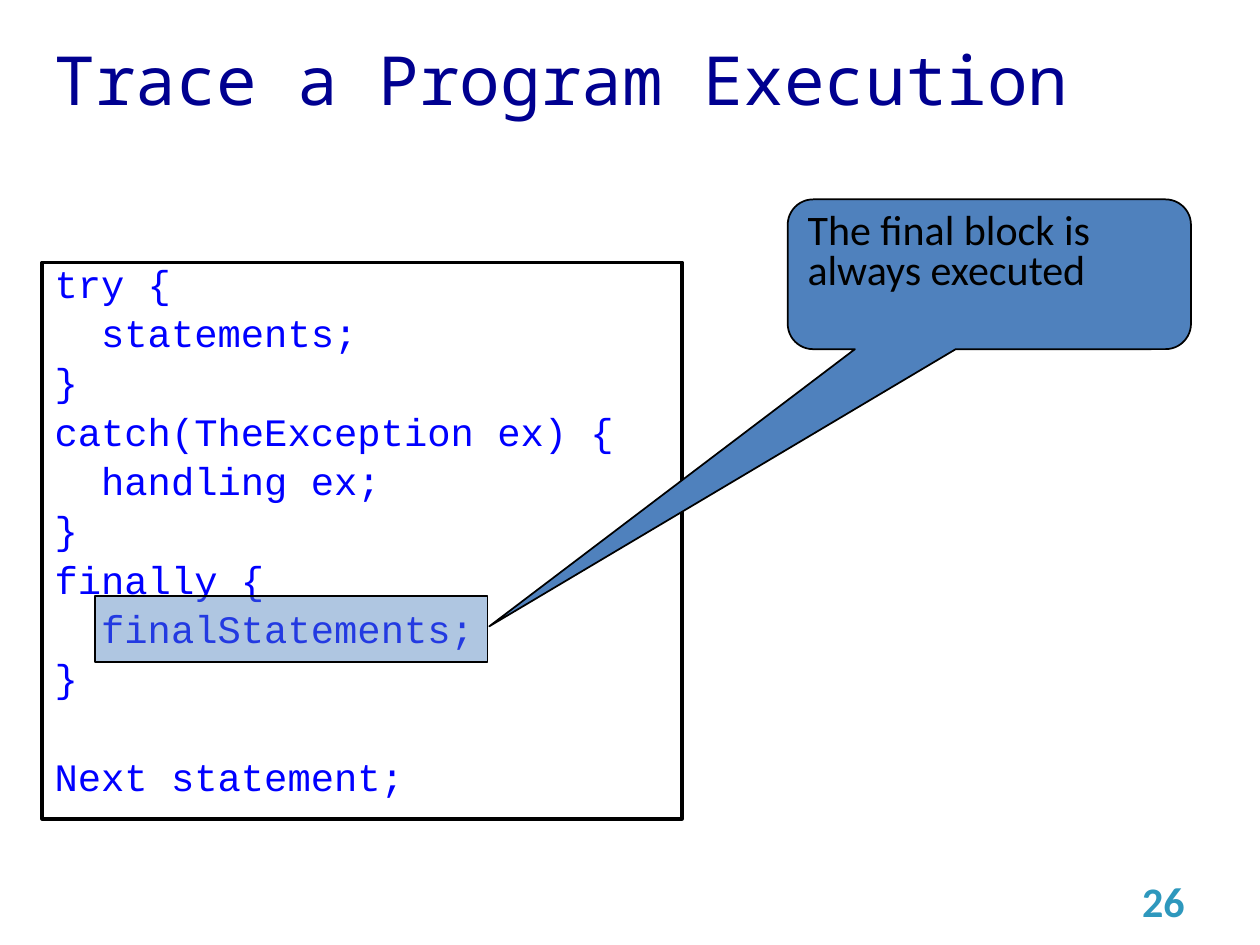
import pptx
import pptx.util
import pptx.dml.color
import pptx.enum.shapes
import pptx.enum.text
import pptx.oxml
import pptx.oxml.ns
import lxml.etree

Cm = pptx.util.Cm
Pt = pptx.util.Pt
RGBColor = pptx.dml.color.RGBColor
SHAPE = pptx.enum.shapes.MSO_SHAPE
ANCHOR = pptx.enum.text.MSO_ANCHOR
ALIGN = pptx.enum.text.PP_ALIGN

NAVY = RGBColor(0x00, 0x00, 0x90)
CODE_BLUE = RGBColor(0x00, 0x00, 0xFF)
STEEL = RGBColor(0x4F, 0x81, 0xBD)
TEAL = RGBColor(0x2E, 0x98, 0xBD)
BLACK = RGBColor(0, 0, 0)
WHITE = RGBColor(0xFF, 0xFF, 0xFF)


def add_box(kind, left, top, width, height, fill, line_width):
    box = page.shapes.add_shape(kind, Cm(left), Cm(top), Cm(width), Cm(height))
    box.shadow.inherit = False
    box.fill.solid()
    box.fill.fore_color.rgb = fill
    box.line.color.rgb = BLACK
    box.line.width = Pt(line_width)
    box.text_frame.word_wrap = True
    box.text_frame.vertical_anchor = ANCHOR.TOP
    return box


def write(para, text, font, size, color, align=ALIGN.LEFT):
    para.text = text
    para.alignment = align
    para.font.name = font
    para.font.size = Pt(size)
    para.font.color.rgb = color


deck = pptx.Presentation()
deck.slide_width = Cm(25.4)
deck.slide_height = Cm(19.05)
page = deck.slides.add_slide(deck.slide_layouts[6])

for text, left, top, width, height, font, size, color, align, bold in [
    ("Trace a Program Execution", 0.85, 0.85, 22.65, 1.48,
     "Noto Sans Mono", 38.7, NAVY, ALIGN.LEFT, False),
    ("26", 18.2, 17.65, 5.93, 1.02, "Calibri", 24, TEAL, ALIGN.RIGHT, True),
]:
    label = page.shapes.add_textbox(Cm(left), Cm(top), Cm(width), Cm(height))
    label.text_frame.word_wrap = True
    label.text_frame.vertical_anchor = ANCHOR.MIDDLE
    para = label.text_frame.paragraphs[0]
    write(para, text, font, size, color, align)
    para.font.bold = bold

LINE_HEIGHT = 24
LINE_GAP = 4.2
INDENT = Cm(0.94)
code_lines = [
    ("try {", 0),
    ("statements;", 1),
    ("}", 0),
    ("catch(TheException ex) {", 0),
    ("handling ex;", 1),
    ("}", 0),
    ("finally {", 0),
    ("finalStatements;", 1),
    ("}", 0),
    ("Next statement;", 0),
]
code_box = add_box(SHAPE.RECTANGLE, 0.85, 5.29, 12.9, 11.22, WHITE, 2)
code_box.text_frame.margin_top = Cm(0.03)
for index, (text, depth) in enumerate(code_lines):
    if index:
        para = code_box.text_frame.add_paragraph()
    else:
        para = code_box.text_frame.paragraphs[0]
    write(para, text, "Courier New", 22.2, CODE_BLUE)
    para.line_spacing = Pt(LINE_HEIGHT)
    para.space_after = Pt(LINE_GAP)
    para._p.get_or_add_pPr().set("marL", str(depth * INDENT))
code_box.text_frame.paragraphs[-2].space_after = Pt(LINE_HEIGHT + 2 * LINE_GAP)

callout = add_box(SHAPE.ROUNDED_RECTANGULAR_CALLOUT, 15.88, 4.02, 8.13, 3.02, STEEL, 1)
callout.adjustments[0] = -1.24
callout.adjustments[1] = 2.35
callout.adjustments[2] = 0.17
para = callout.text_frame.paragraphs[0]
write(para, "The final block is always executed", "Calibri", 24, BLACK)
para.line_spacing = 0.8
para.space_before = Pt(4.8)

highlight = add_box(SHAPE.RECTANGLE, 1.91, 12.02, 7.92, 1.32, STEEL, 1)
fill_color = highlight._element.spPr.find(
    pptx.oxml.ns.qn("a:solidFill")).find(pptx.oxml.ns.qn("a:srgbClr"))
lxml.etree.SubElement(fill_color, pptx.oxml.ns.qn("a:alpha")).set("val", "45000")

deck.save("out.pptx")
